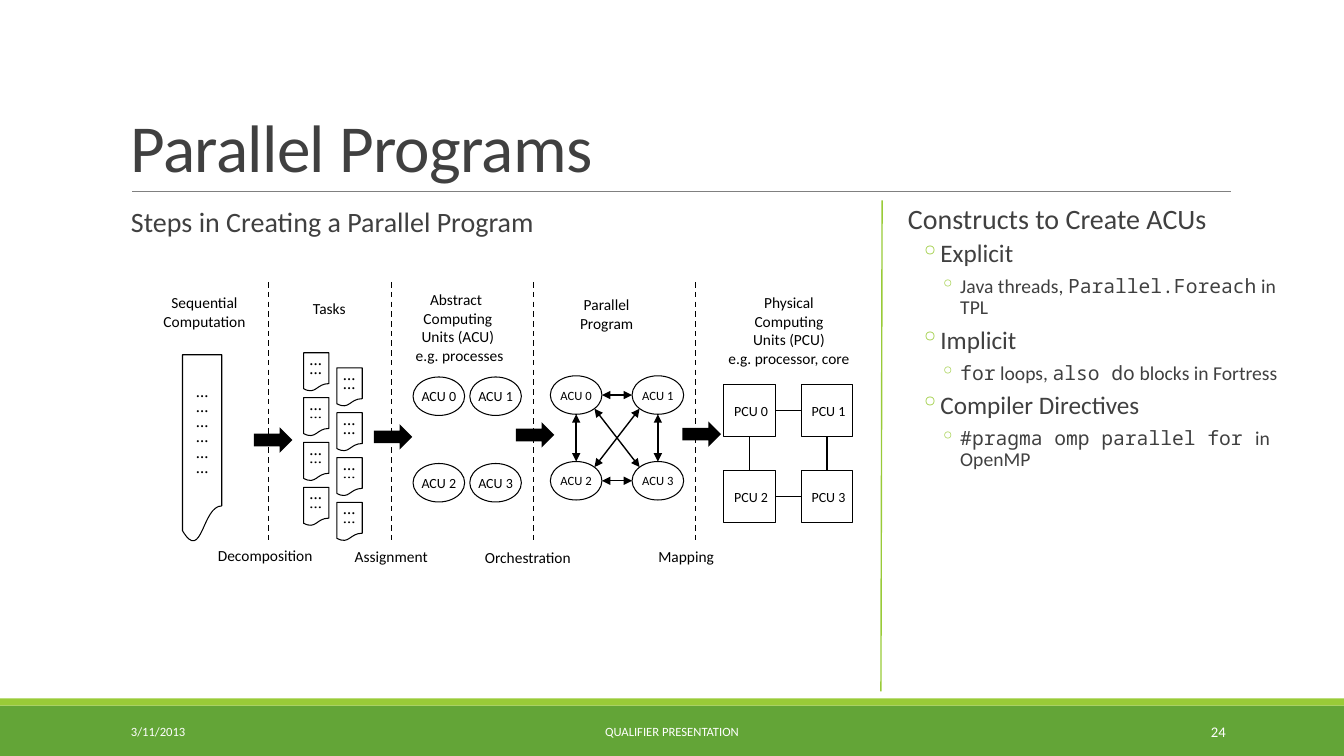
from dataclasses import dataclass
from itertools import product
from lxml.etree import SubElement
from pptx import Presentation
from pptx.dml.color import RGBColor as Rgb
from pptx.enum.dml import MSO_LINE as Dash
from pptx.enum.shapes import MSO_CONNECTOR as Link, MSO_SHAPE as Kind
from pptx.enum.text import MSO_ANCHOR as Anchor, PP_ALIGN as Align
from pptx.oxml.ns import qn
from pptx.util import Cm, Pt


@dataclass(frozen=True)
class Theme:
    ink: str = "000000"
    paper: str = "FFFFFF"
    gray: str = "404040"
    rule: str = "808080"
    green: str = "63A537"
    lime: str = "99CB38"
    sans: str = "Calibri"
    serif: str = "Times New Roman"
    mono: str = "Noto Sans Mono"
    title: float = 48
    head: float = 20
    point: float = 18
    detail: float = 14
    label: float = 11
    page: float = 10.5
    node: float = 10
    small: float = 9


T = Theme()
THIN = 0.75
NODE = 1.3
OVAL = 0.97
DOTS = dict(font=T.serif, bold=True)


def put(obj, **vals):
    for key, val in vals.items():
        setattr(obj, key, val)


def lengths(vals):
    return [Cm(val) for val in vals]


def add_runs(para, runs, size, color, font=T.sans, bold=False):
    """Add (text, font) pairs, or one plain string, to a paragraph."""
    for words, face in [(runs, font)] if isinstance(runs, str) else runs:
        run = para.add_run()
        run.text = words
        put(run.font, name=face, size=Pt(size), bold=bold)
        run.font.color.rgb = Rgb.from_string(color)


def write(shape, lines, size, color=T.ink, align=Align.CENTER, anchor=Anchor.TOP,
          inset=(0, 0, 0, 0), wrap=True, after=0, ls=1.0, **face):
    frame = shape.text_frame
    left, top, right, bottom = lengths(inset)
    put(frame, margin_left=left, margin_top=top, margin_right=right,
        margin_bottom=bottom, word_wrap=wrap, vertical_anchor=anchor)
    for i, line in enumerate(lines):
        para = frame.add_paragraph() if i else frame.paragraphs[0]
        put(para, alignment=align, space_after=Pt(after), line_spacing=ls)
        add_runs(para, line, size, color, **face)


def add_box(shapes, kind, box, fill=None, line=None):
    shape = shapes.add_shape(kind, *lengths(box))
    shape.shadow.inherit = False
    if fill:
        shape.fill.solid()
        shape.fill.fore_color.rgb = Rgb.from_string(fill)
    else:
        shape.fill.background()
    if line:
        shape.line.color.rgb = Rgb.from_string(line)
        shape.line.width = Pt(THIN)
    else:
        shape.line.fill.background()
    return shape


def add_line(shapes, ends=(0, 0, 0, 0), color=T.ink, width=1, dash=None, heads=False):
    line = shapes.add_connector(Link.STRAIGHT, *lengths(ends))
    put(line.line, width=Pt(width), dash_style=dash)
    line.line.color.rgb = Rgb.from_string(color)
    if heads:
        pen = line.line._get_or_add_ln()
        for end in ("a:headEnd", "a:tailEnd"):
            SubElement(pen, qn(end), type="triangle")
    SubElement(line._element.spPr, qn("a:effectLst"))
    return line


def add_text(shapes, box, lines, size, color, **style):
    write(shapes.add_textbox(*lengths(box)), lines, size, color, **style)


def add_label(shapes, box, lines, size=T.label, **style):
    write(add_box(shapes, Kind.RECTANGLE, box, T.paper), lines, size, **style)


def add_outline(shapes, box, level_runs):
    """Add a text box of (level, runs) paragraphs, bulleted below level 0."""
    frame = shapes.add_textbox(*lengths(box)).text_frame
    put(frame, word_wrap=True, margin_left=0, margin_right=0)
    sizes, indents = (T.head, T.point, T.detail), (0.25, 1.07, 1.57)
    for i, (level, runs) in enumerate(level_runs):
        para = frame.add_paragraph() if i else frame.paragraphs[0]
        put(para, level=level, line_spacing=0.9, space_before=Pt(2 if level else 12),
            space_after=Pt(4 if level else 2))
        props = para._p.get_or_add_pPr()
        props.set("marL", str(Cm(indents[level])))
        if level:
            props.set("indent", str(Cm(-0.51)))
            tint = SubElement(props, qn("a:buClr"))
            SubElement(tint, qn("a:srgbClr"), val=T.lime)
            SubElement(props, qn("a:buChar"), char="◦")
        add_runs(para, runs, sizes[level], T.gray)


def add_frame(shapes):
    add_box(shapes, Kind.RECTANGLE, (0, 17.78, 33.87, 1.27), T.green)
    add_box(shapes, Kind.RECTANGLE, (0, 17.6, 33.87, 0.18), T.lime)
    add_line(shapes, (3.33, 4.83, 31.01, 4.83), T.rule, 0.5)
    pad = (0.25, 0.13, 0.25, 0.13)
    title = shapes.add_textbox(*lengths((3.05, 0.79, 27.94, 4.04)))
    write(title, ["Parallel Programs"], T.title, T.gray, Align.LEFT,
          Anchor.BOTTOM, pad, ls=0.85)
    title.text_frame.paragraphs[0].runs[0].font._element.set("spc", "-50")
    for left, width, words, size, align in (
            (3.05, 6.86, "3/11/2013", T.small, Align.LEFT),
            (10.24, 13.39, "QUALIFIER PRESENTATION", T.small, Align.CENTER),
            (27.51, 3.63, "24", T.page, Align.RIGHT)):
        add_text(shapes, (left, 17.93, width, 1.02), [words], size, T.paper,
                 align=align, anchor=Anchor.MIDDLE, inset=pad)


def add_tasks(shapes):
    for (left, top), row in product(((7.65, 8.89), (8.49, 9.27)), range(4)):
        y = top + row * 1.13
        for drop in (0.22, 0):
            add_label(shapes, (left + 0.15, y + drop, 0.43, 0.48), ["…"], T.small,
                      align=Align.LEFT, wrap=False, **DOTS)
        add_box(shapes, Kind.FLOWCHART_DOCUMENT, (left, y, 0.64, 0.97), line=T.ink)


def add_nodes(shapes, kind, name, lefts, tops, high, size, shift=0):
    """Add four numbered nodes, row by row, and return them."""
    nodes = []
    for i, (top, left) in enumerate(product(tops, lefts)):
        node = add_box(shapes, kind, (left, top, NODE, high), line=T.ink)
        write(node, [f"{name} {i}"], size, anchor=Anchor.MIDDLE,
              inset=(shift, 0.13, 0, 0.13), after=4)
        nodes.append(node)
    return nodes


def add_mesh(shapes, lefts, tops):
    """Join four ovals, each with every other, by double arrows."""
    (x0, x1), (y0, y1) = [[v + half for v in vals] for vals, half in
                          ((lefts, NODE / 2), (tops, OVAL / 2))]
    rx, ry = NODE / 2, OVAL / 2
    dx, dy = rx * 0.71, ry * 0.71
    for y in (y0, y1):
        add_line(shapes, (x0 + rx, y, x1 - rx, y), heads=True)
    for x in (x0, x1):
        add_line(shapes, (x, y0 + ry, x, y1 - ry), heads=True)
    for a, b, d in ((x0, x1, dx), (x1, x0, -dx)):
        add_line(shapes, (a + d, y0 + dy, b - d, y1 - dy), heads=True)


def add_steps(shapes):
    scroll = add_box(shapes, Kind.FLOWCHART_DOCUMENT, (4.6, 8.94, 0.99, 4.75), line=T.ink)
    write(scroll, ["………………"], T.small, anchor=Anchor.MIDDLE,
          inset=(0.25, 0.13, 0.25, 0.13), after=4, **DOTS)
    for x in (6.76, 9.86, 13.44, 17.53):
        add_line(shapes, (x, 7.11, x, 13.61), dash=Dash.DASH)
    add_tasks(shapes)

    add_nodes(shapes, Kind.OVAL, "ACU", (10.41, 11.84), (9.5, 11.68), OVAL, T.node)
    lefts, tops = (13.87, 15.93), (9.47, 11.63)
    add_nodes(shapes, Kind.OVAL, "ACU", lefts, tops, OVAL, T.small)
    add_mesh(shapes, lefts, tops)
    units = add_nodes(shapes, Kind.RECTANGLE, "PCU", (18.24, 20.19), (9.7, 11.86),
                      NODE, T.node, 0.08)
    for a, b, out, into in ((0, 1, 3, 1), (2, 3, 3, 1), (0, 2, 2, 0), (1, 3, 2, 0)):
        wire = add_line(shapes)
        wire.begin_connect(units[a], out)
        wire.end_connect(units[b], into)

    for box, lines in (
            ((4.09, 7.39, 2.13, 1.17), ["Sequential", "Computation"]),
            ((7.9, 7.54, 0.8, 0.61), ["Tasks"]),
            ((10.36, 7.32, 2.36, 1.88),
             ["Abstract ", "Computing", "Units (ACU)", " e.g. processes"]),
            ((14.58, 7.44, 1.42, 1.17), ["Parallel", "Program"]),
            ((18.31, 7.39, 3.15, 2.11),
             ["Physical", "Computing", "Units (PCU)", "e.g. processor, core"])):
        add_label(shapes, box, lines, wrap=False)
    for left, top in ((6.4, 10.77), (9.42, 10.69), (13, 10.64), (17.2, 10.62)):
        add_box(shapes, Kind.RIGHT_ARROW, (left, top, 0.97, 0.64), T.ink)
    for left, top, width, step in (
            (5.49, 13.77, 2.66, "Decomposition"), (8.94, 13.79, 2.29, "Assignment"),
            (12.22, 13.82, 2.46, "Orchestration"), (16.59, 13.79, 1.8, "Mapping")):
        add_label(shapes, (left, top, width, 0.48), [step], align=Align.LEFT, after=4)


def main():
    deck = Presentation()
    put(deck, slide_width=Cm(33.87), slide_height=Cm(19.05))
    shapes = deck.slides.add_slide(deck.slide_layouts[6]).shapes
    add_frame(shapes)
    add_outline(shapes, (3.05, 5.13, 19.33, 11.18),
                [(0, "Steps in Creating a Parallel Program")])
    add_steps(shapes.add_group_shape().shapes)
    add_line(shapes, (22.23, 5.05, 22.2, 17.42), T.lime)
    add_outline(shapes, (22.63, 5.05, 10.21, 11.18), [
        (0, "Constructs to Create ACUs"),
        (1, "Explicit"),
        (2, [("Java threads, ", T.sans), ("Parallel.Foreach", T.mono), (" in TPL", T.sans)]),
        (1, "Implicit"),
        (2, [("for", T.mono), (" loops, ", T.sans), ("also do", T.mono),
             (" blocks in Fortress", T.sans)]),
        (1, "Compiler Directives"),
        (2, [("#pragma omp parallel for ", T.mono), ("in OpenMP", T.sans)])])
    deck.save("out.pptx")


if __name__ == "__main__":
    main()
